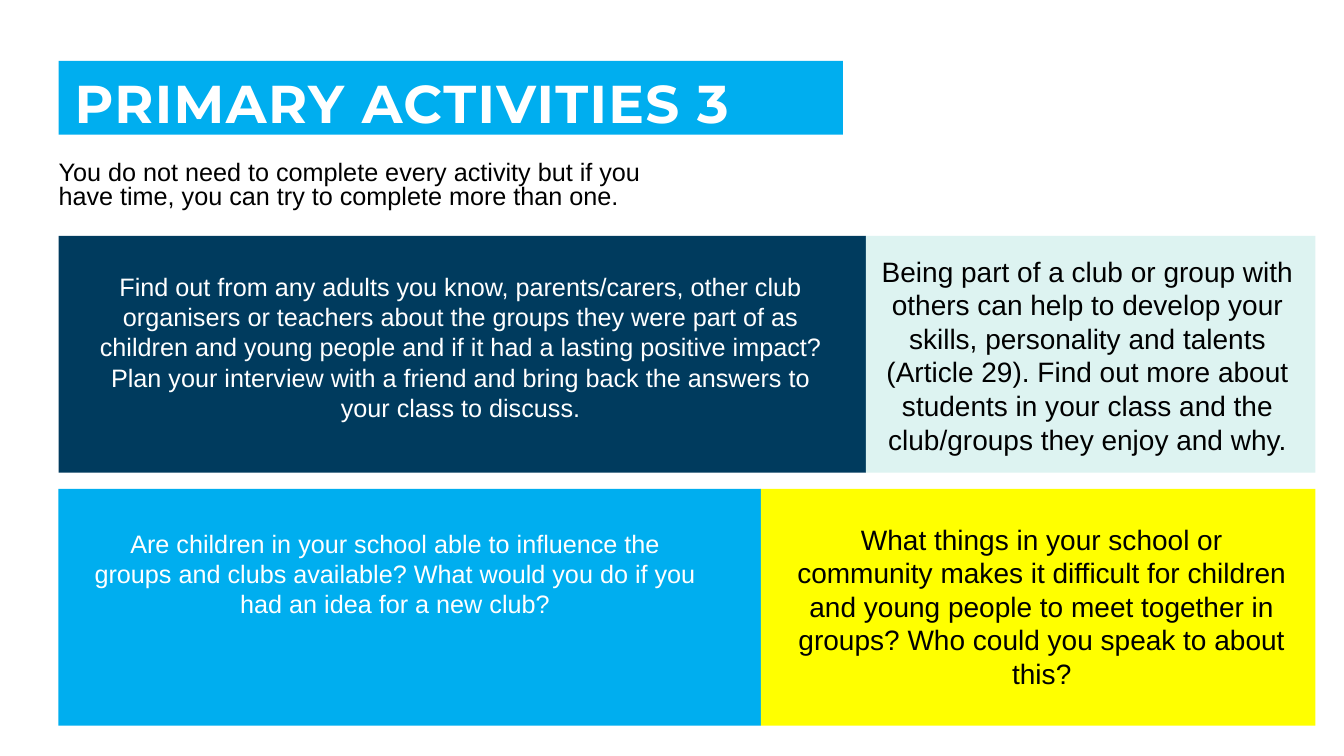
from dataclasses import dataclass

from pptx import Presentation
from pptx import util as u
from pptx.dml.color import RGBColor
from pptx.enum import shapes, text

Pt = u.Pt


@dataclass(frozen=True)
class Theme:
    font: str = "Arial"
    title_font: str = "Montserrat"
    white: str = "FFFFFF"
    black: str = "000000"
    sky: str = "00AEEF"
    navy: str = "003B5E"
    mint: str = "DDF3F1"
    yellow: str = "FFFF00"
    title_size: float = 38
    large_size: float = 20
    body_size: float = 18


THEME = Theme()
LEFT, RIGHT = 41.8, 939.6
ROW_TOP, ROW_HEIGHT, ROW_GAP = 168.5, 169.2, 11.5

# Each row: the x of its inner edge, then its two activities.
# An activity: fill, ink, size, text box (dx, dy, width, height), wording.
ROWS = [
    (618.5, [
        (THEME.navy, THEME.white, THEME.body_size, (17.2, 21.6, 540, 116.6),
         "Find out from any adults you know, parents/carers, other club organisers or "
         "teachers about the groups they were part of as children and young people and "
         "if it had a lasting positive impact? Plan your interview with a friend and "
         "bring back the answers to your class to discuss."),
        (THEME.mint, THEME.black, THEME.large_size, (-2.2, 9.4, 321.1, 152.6),
         "Being part of a club or group with others can help to develop your skills, "
         "personality and talents (Article 29). Find out more about students in your "
         "class and the club/groups they enjoy and why."),
    ]),
    (543.6, [
        (THEME.sky, THEME.white, THEME.body_size, (17.2, 24.5, 446.4, 72.7),
         "Are children in your school able to influence the groups and clubs available? "
         "What would you do if you had an idea for a new club?"),
        (THEME.yellow, THEME.black, THEME.large_size, (17.3, 20.2, 366.5, 128.2),
         "What things in your school or community makes it difficult for children and "
         "young people to meet together in groups? Who could you speak to about this?"),
    ]),
]


def apply(target, formats):
    for name, value in formats.items():
        setattr(target, name, value)


def add_panel(slide, box, fill):
    panel = slide.shapes.add_shape(shapes.MSO_SHAPE.RECTANGLE, *map(Pt, box))
    panel.shadow.inherit = False
    panel.fill.solid()
    panel.fill.fore_color.rgb = RGBColor.from_string(fill)
    panel.line.fill.background()
    return panel


def write(frame, wording, ink, frame_format, paragraph_format, font_format):
    """Fill a text frame with one formatted run, and return the run."""
    apply(frame, {"word_wrap": True, **frame_format})
    paragraph = frame.paragraphs[0]
    apply(paragraph, paragraph_format)
    run = paragraph.add_run()
    run.text = wording
    apply(run.font, {"name": THEME.font, "size": Pt(THEME.body_size), **font_format})
    run.font.color.rgb = RGBColor.from_string(ink)
    return run


def add_title(slide, box):
    banner = add_panel(slide, box, THEME.sky)
    title = write(
        banner.text_frame, "PRIMARY ACTIVITIES 3", THEME.white,
        {"margin_left": Pt(11.5), "margin_top": Pt(11.5), "margin_right": Pt(8.6),
         "margin_bottom": 0, "vertical_anchor": text.MSO_ANCHOR.MIDDLE,
         "auto_size": text.MSO_AUTO_SIZE.SHAPE_TO_FIT_TEXT},
        {"alignment": text.PP_ALIGN.LEFT, "line_spacing": 0.9},
        {"name": THEME.title_font, "size": Pt(THEME.title_size), "bold": True})
    title.font._element.set("spc", "100")


def add_instruction(slide, box):
    instruction = slide.shapes.add_textbox(*map(Pt, box))
    write(instruction.text_frame,
          "You do not need to complete every activity but if you have time, "
          "you can try to complete more than one.", THEME.black,
          {"margin_left": 0}, {"line_spacing": 0.8}, {})


def add_activity(slide, box, activity):
    fill, ink, size, (dx, dy, width, height), wording = activity
    left, top = box[:2]
    add_panel(slide, box, fill)
    question = slide.shapes.add_textbox(Pt(left + dx), Pt(top + dy), Pt(width), Pt(height))
    write(question.text_frame, wording, ink,
          {"auto_size": text.MSO_AUTO_SIZE.SHAPE_TO_FIT_TEXT},
          {"alignment": text.PP_ALIGN.CENTER}, {"size": Pt(size)})


def add_activity_row(slide, box, split, activities):
    """Place two activities side by side, meeting at x = split."""
    left, top, width, height = box
    edges = (left, split, left + width)
    for start, end, activity in zip(edges, edges[1:], activities):
        add_activity(slide, (start, top, end - start, height), activity)


def main():
    deck = Presentation()
    apply(deck, {"slide_width": Pt(960), "slide_height": Pt(540)})
    slide = deck.slides.add_slide(deck.slide_layouts[6])
    add_title(slide, (LEFT, 43.4, 560.2, 52.8))
    add_instruction(slide, (LEFT, 112.3, 447.1, 44.6))
    for index, (split, activities) in enumerate(ROWS):
        top = ROW_TOP + index * (ROW_HEIGHT + ROW_GAP)
        add_activity_row(slide, (LEFT, top, RIGHT - LEFT, ROW_HEIGHT), split, activities)
    deck.save("out.pptx")


if __name__ == "__main__":
    main()
